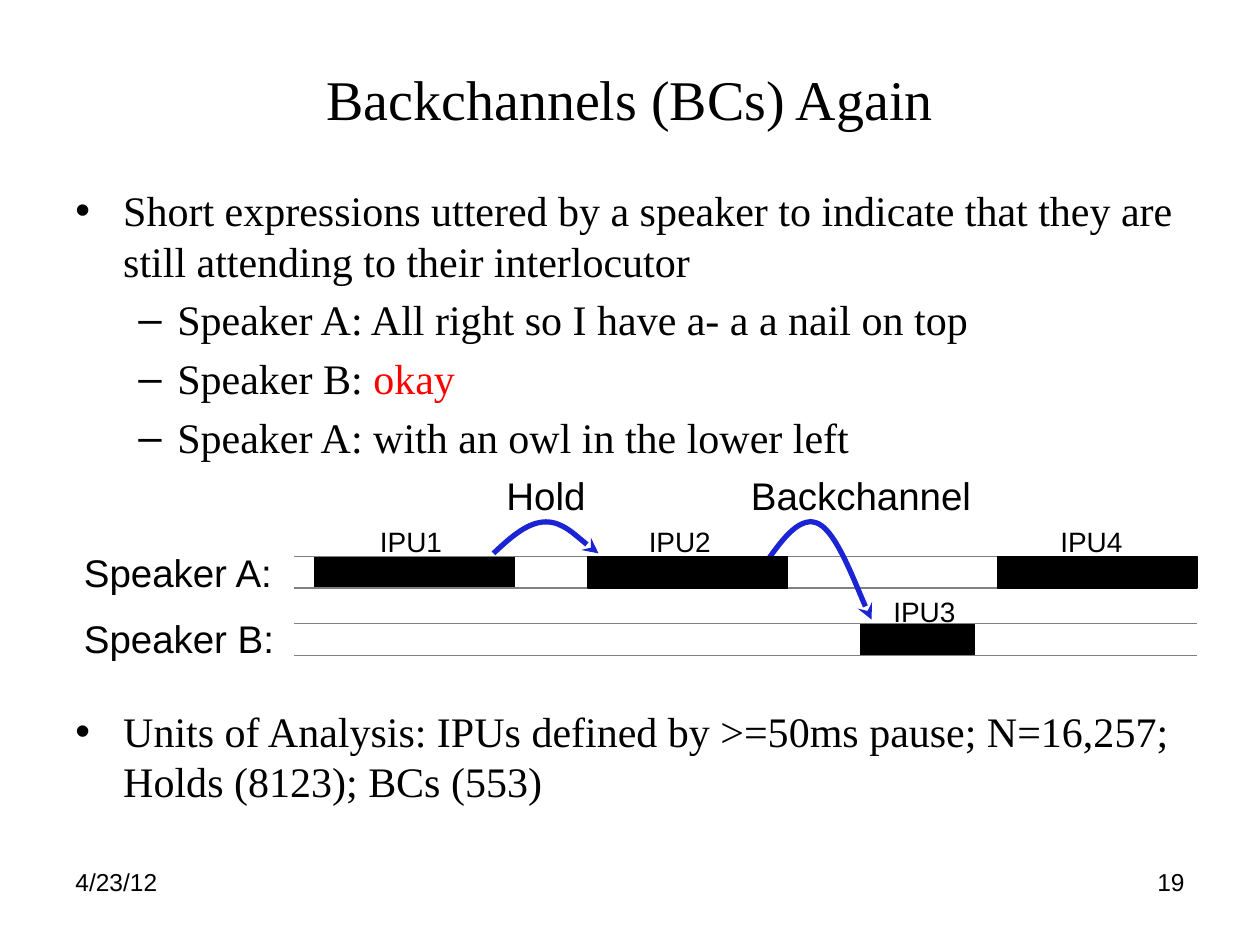
from lxml import etree
from pptx import Presentation, util as u
from pptx.dml.color import RGBColor
from pptx.enum import shapes, text
from pptx.oxml import ns

GRID = u.Inches(1) / 12
SERIF, SANS = "Times New Roman", "Arial"
BLACK, GREY, RED, BLUE = "000000", "808080", "FF0000", "1B24D3"
LEFT, CENTER, RIGHT = text.PP_ALIGN.LEFT, text.PP_ALIGN.CENTER, text.PP_ALIGN.RIGHT
BODY_SIZE, LINE_HEIGHT, GAP = 24, 28.8, 4.8
LEVELS = [("•", 0.38, -0.38), ("–", 0.81, -0.31)]


def grid(*cells):
    """Turn grid units into lengths."""
    return [u.Emu(round(cell * GRID)) for cell in cells]


def color(hex_code):
    """Turn a hex string into a colour."""
    return RGBColor.from_string(hex_code)


def add_node(parent, tag, **attributes):
    """Append a drawing element to its parent."""
    return etree.SubElement(parent, ns.qn(tag), attributes)


def add_span(para, words, size, font, hex_code=BLACK):
    """Add one styled run."""
    span = para.add_run()
    span.text = words
    span.font.size, span.font.name = u.Pt(size), font
    span.font.color.rgb = color(hex_code)


def add_frame(parent, box, wrap=True, inset=True):
    """Add an empty text box and return its frame."""
    frame = parent.shapes.add_textbox(*grid(*box)).text_frame
    frame.word_wrap = wrap
    if not inset:
        frame.margin_left = frame.margin_top = 0
        frame.margin_right = frame.margin_bottom = 0
        frame.auto_size = text.MSO_AUTO_SIZE.SHAPE_TO_FIT_TEXT
    return frame


def add_label(parent, box, words, size, font=SANS, align=LEFT, **options):
    """Add a text box holding one line."""
    frame = add_frame(parent, box, **options)
    frame.paragraphs[0].alignment = align
    add_span(frame.paragraphs[0], words, size, font)
    return frame


def add_body(page, box):
    """Add the bulleted list, leaving room for the timeline."""
    room = 4 * (LINE_HEIGHT + GAP) + GAP
    items = [
        (0, 0, [("Short expressions uttered by a speaker to indicate that they "
                 "are still attending to their interlocutor", BLACK)]),
        (1, GAP, [("Speaker A: All right so I have a- a a nail on top", BLACK)]),
        (1, GAP, [("Speaker B: ", BLACK), ("okay", RED)]),
        (1, GAP, [("Speaker A: with an owl in the lower left", BLACK)]),
        (0, room, [("Units of Analysis: IPUs defined by >=50ms pause; N=16,257; "
                    "Holds (8123); BCs (553)", BLACK)]),
    ]
    frame = add_frame(page, box)
    for index, (level, before, spans) in enumerate(items):
        para = frame.add_paragraph() if index else frame.paragraphs[0]
        bullet, margin, indent = LEVELS[level]
        para.level = level
        para.line_spacing, para.space_before = u.Pt(LINE_HEIGHT), u.Pt(before)
        properties = para._p.get_or_add_pPr()
        properties.set("marL", str(u.Inches(margin)))
        properties.set("indent", str(u.Inches(indent)))
        add_node(properties, "a:buFont", typeface=SANS)
        add_node(properties, "a:buChar", char=bullet)
        for words, hex_code in spans:
            add_span(para, words, BODY_SIZE, SERIF, hex_code)


def add_bar(group, box):
    """Add one black speech bar."""
    bar = group.shapes.add_shape(shapes.MSO_SHAPE.RECTANGLE, *grid(*box))
    bar.shadow.inherit = False
    bar.fill.solid()
    bar.fill.fore_color.rgb = color(BLACK)
    bar.line.color.rgb, bar.line.width = color(BLACK), u.Pt(0.75)


def add_rule(group, left, right, row):
    """Add one grey track line."""
    rule = group.shapes.add_connector(
        shapes.MSO_CONNECTOR.STRAIGHT, *grid(left, row, right, row))
    rule.line.color.rgb, rule.line.width = color(GREY), u.Pt(0.75)
    add_node(rule._element.spPr, "a:effectLst")


def add_curve(group, points):
    """Add a curved arrow through Bézier points."""
    places = [grid(*point) for point in points]
    builder = group.shapes.build_freeform(*places[0], scale=1.0)
    builder.add_line_segments(places[1:], close=False)
    curve = builder.convert_to_shape()
    curve.shadow.inherit = False
    curve.fill.background()
    curve.line.color.rgb, curve.line.width = color(BLUE), u.Pt(3)
    add_node(curve.line._get_or_add_ln(), "a:tailEnd", type="stealth")
    outline = next(curve._element.iter(ns.qn("a:path")))
    segments = outline.findall(ns.qn("a:lnTo"))
    for start in range(0, len(segments), 3):
        bend = add_node(outline, "a:cubicBezTo")
        for segment in segments[start:start + 3]:
            bend.append(segment[0])
            outline.remove(segment)


def add_timeline(page, box):
    """Add the two speaker tracks with bars, arrows and labels."""
    left, top, width, height = box
    group = page.shapes.add_group_shape()
    bars = {"IPU1": (22, 8, 19, 3), "IPU3": (74, 14.5, 10.8, 2.9),
            "IPU2": (48, 8, 19, 3), "IPU4": (87, 8, 19, 3)}
    labels = {"IPU1": (28.15, 5), "IPU2": (53.75, 5),
              "IPU3": (77.05, 11.6), "IPU4": (92.95, 5)}
    curves = [
        [(39, 7.7), (40.7, 6.1), (42.3, 4.7), (44, 4.7),
         (45.6, 4.7), (48.2, 7.2), (49, 7.7)],
        [(65, 8.5), (66.6, 6.2), (68.3, 4), (70, 4.9),
         (71.7, 5.8), (74.2, 12.5), (75, 14)],
    ]
    captions = [("Speaker A:", 0, 7.3, 19, LEFT), ("Speaker B:", 0, 13.6, 19, LEFT),
                ("Hold", 37, 0, 14, CENTER), ("Backchannel", 60, 0, 28, CENTER)]

    def add_bars(*names):
        """Add the named bars."""
        for name in names:
            x, y, w, h = bars[name]
            add_bar(group, (left + x, top + y, w, h))

    add_bars("IPU1", "IPU3")
    for row in (8, 11, height - 3, height):
        add_rule(group, left + 20, left + width, top + row)
    for points in curves:
        add_curve(group, [(left + x, top + y) for x, y in points])
    for words, x, y, w, align in captions:
        add_label(group, (left + x, top + y, w, 4.4), words, 22,
                  align=align, inset=False)
    add_bars("IPU2", "IPU4")
    for name, (x, y) in labels.items():
        add_label(group, (left + x, top + y, 6, 3.2), name, 16,
                  align=CENTER, wrap=False, inset=False)


def add_footer(page, box):
    """Add the date at the left and the page number at the right."""
    left, top, width, height = box
    add_label(page, (left, top, 28, height), "4/23/12", 14)
    add_label(page, (left + width - 28, top, 28, height), "19", 14, align=RIGHT)


def main():
    """Build and save the slide."""
    deck = Presentation()
    deck.slide_width, deck.slide_height = u.Inches(10), u.Inches(7.5)
    page = deck.slides.add_slide(deck.slide_layouts[6])
    add_footer(page, (6, 82, 108, 6.2))
    title = add_label(page, (6, 3.6, 108, 11.4), "Backchannels (BCs) Again",
                      32, SERIF, CENTER)
    title.vertical_anchor = text.MSO_ANCHOR.MIDDLE
    add_body(page, (6, 17, 108, 63.4))
    add_timeline(page, (8, 45, 106, 17.4))
    deck.save("out.pptx")


if __name__ == "__main__":
    main()
